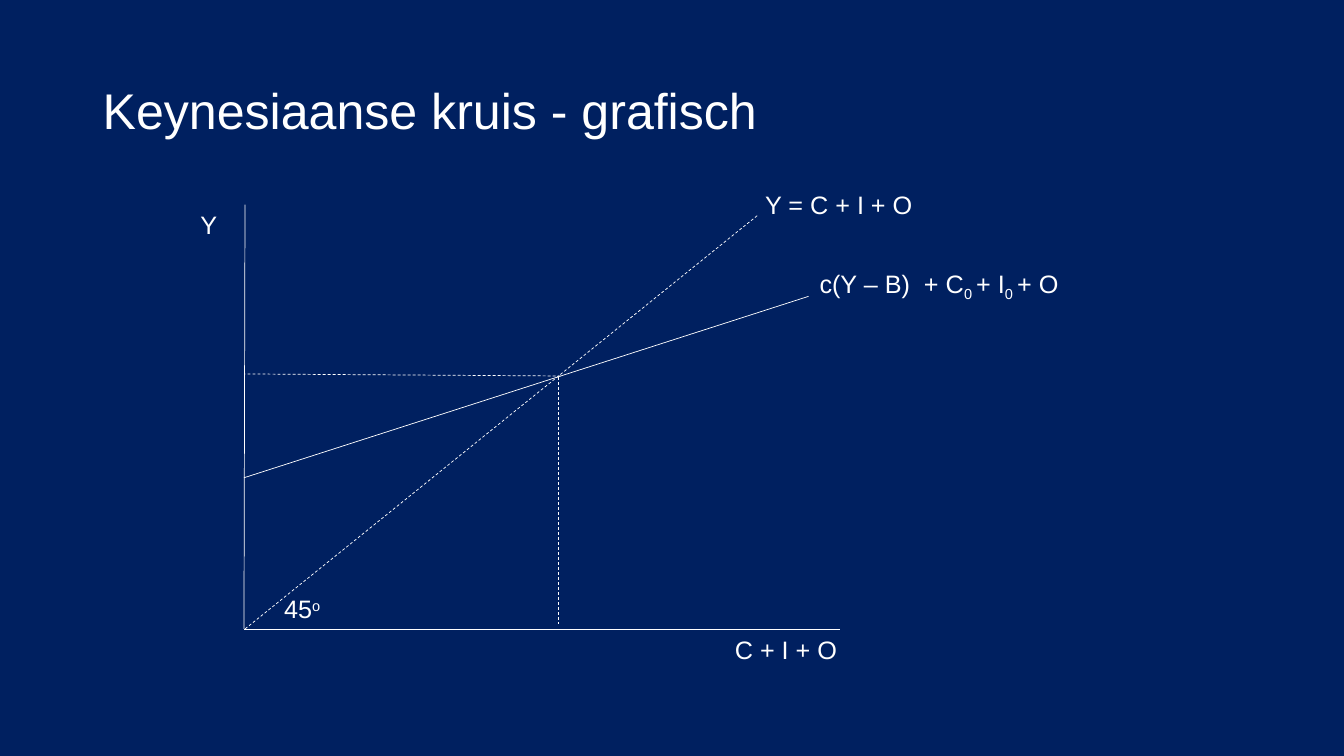
import pptx
import pptx.dml.color
import pptx.enum.dml
import pptx.enum.shapes
import pptx.enum.text
import pptx.oxml.ns
import pptx.util
import lxml.etree

EMU_PER_PX = 9144  # 100 px to the inch
SUPERSCRIPT = 30
SUBSCRIPT = -25


def px(length):
    return pptx.util.Emu(length * EMU_PER_PX)


def color(hex_string):
    return pptx.dml.color.RGBColor.from_string(hex_string)


class GraphSlide:
    font = "Arial"
    ink = "FFFFFF"
    background = "002060"
    line_width = 0.5
    label_size = 18

    def __init__(self, presentation):
        self.slide = presentation.slides.add_slide(presentation.slide_layouts[6])
        fill = self.slide.background.fill
        fill.solid()
        fill.fore_color.rgb = color(self.background)

    def add_text(self, box, runs, size, wrap):
        """Add one paragraph; each run is a (text, baseline) pair."""
        shape = self.slide.shapes.add_textbox(*map(px, box))
        frame = shape.text_frame
        frame.word_wrap = wrap
        paragraph = frame.paragraphs[0]
        for text, baseline in runs:
            run = paragraph.add_run()
            run.text = text
            run.font.name = self.font
            run.font.size = pptx.util.Pt(size)
            run.font.color.rgb = color(self.ink)
            if baseline:
                run.font._element.set("baseline", str(baseline * 1000))
        return frame

    def title(self, box, text):
        frame = self.add_text(box, [(text, 0)], 35.8, True)
        frame.vertical_anchor = pptx.enum.text.MSO_ANCHOR.MIDDLE
        frame.paragraphs[0].line_spacing = 0.9

    def label(self, left, top, width, *runs):
        frame = self.add_text((left, top, width, 40), runs, self.label_size, False)
        frame.auto_size = pptx.enum.text.MSO_AUTO_SIZE.SHAPE_TO_FIT_TEXT

    def line(self, start, end, dashed=False):
        connector = self.slide.shapes.add_connector(
            pptx.enum.shapes.MSO_CONNECTOR.STRAIGHT, *map(px, start + end))
        connector.line.color.rgb = color(self.ink)
        connector.line.width = pptx.util.Pt(self.line_width)
        if dashed:
            connector.line.dash_style = pptx.enum.dml.MSO_LINE.DASH
        lxml.etree.SubElement(connector._element.spPr,
                              pptx.oxml.ns.qn("a:effectLst"))


def main():
    presentation = pptx.Presentation()
    presentation.slide_width = px(1333)
    presentation.slide_height = px(750)
    graph = GraphSlide(presentation)

    graph.title((92, 40, 1150, 145), "Keynesiaanse kruis - grafisch")

    # Axes
    origin = (242, 624)
    graph.line((243, 203), origin)
    graph.line((833, 624), origin)
    graph.label(189, 203, 37, ("Y", 0))
    graph.label(719, 624, 123, ("C + I + O", 0))

    # 45-degree line
    graph.line((751, 214), (243, 624), dashed=True)
    graph.label(272, 584, 58, ("45", 0), ("o", SUPERSCRIPT))
    graph.label(749, 183, 168, ("Y = C + I + O", 0))

    # Spending line
    graph.line((802, 294), (242, 474))
    graph.label(803, 261, 263, ("c(Y – B)  + C", 0), ("0 ", SUBSCRIPT),
                ("+ I", 0), ("0 ", SUBSCRIPT), ("+ O", 0))

    # Equilibrium projected onto both axes
    graph.line((556, 373), (243, 371), dashed=True)
    graph.line((554, 374), (554, 619), dashed=True)

    presentation.save("out.pptx")


if __name__ == "__main__":
    main()
